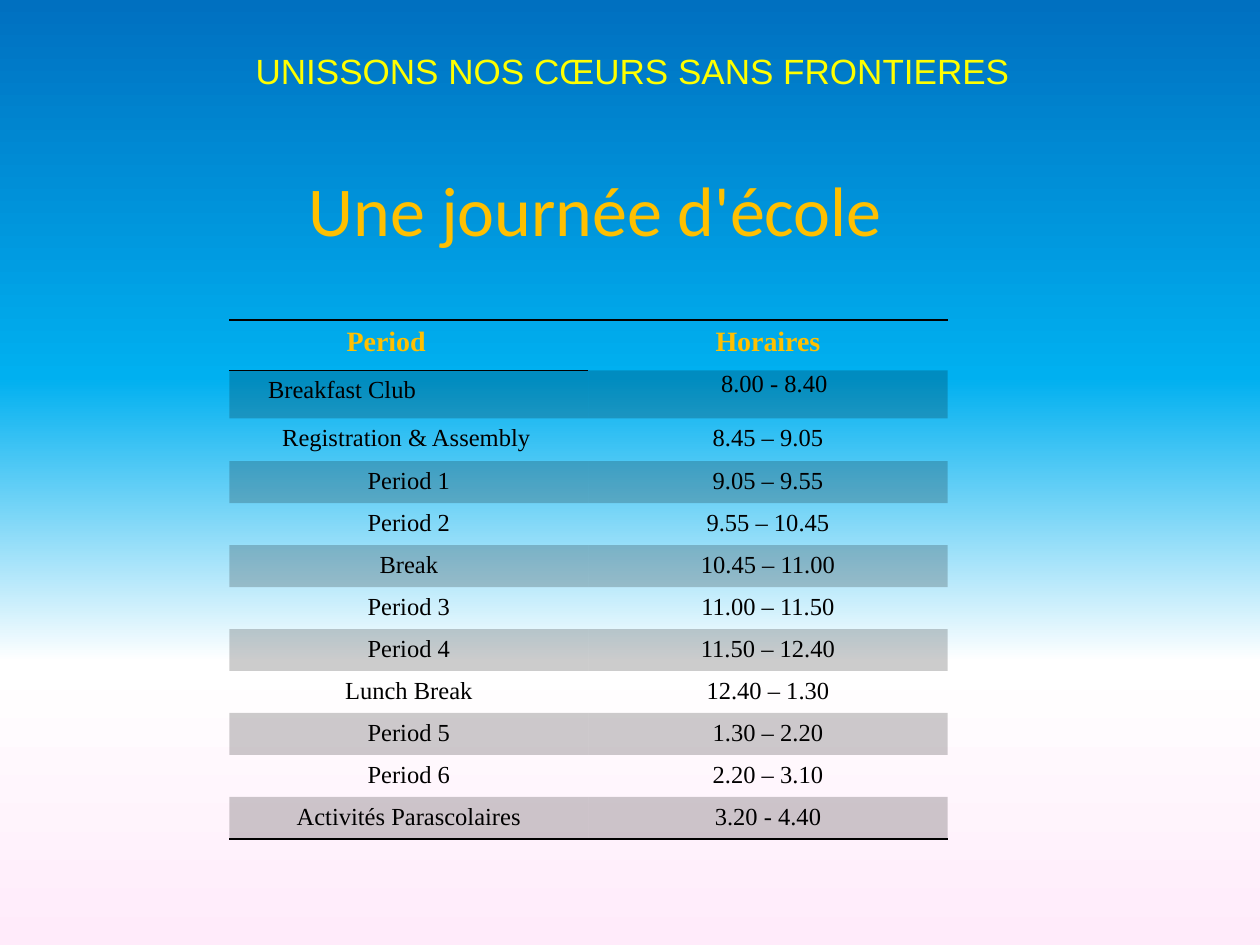
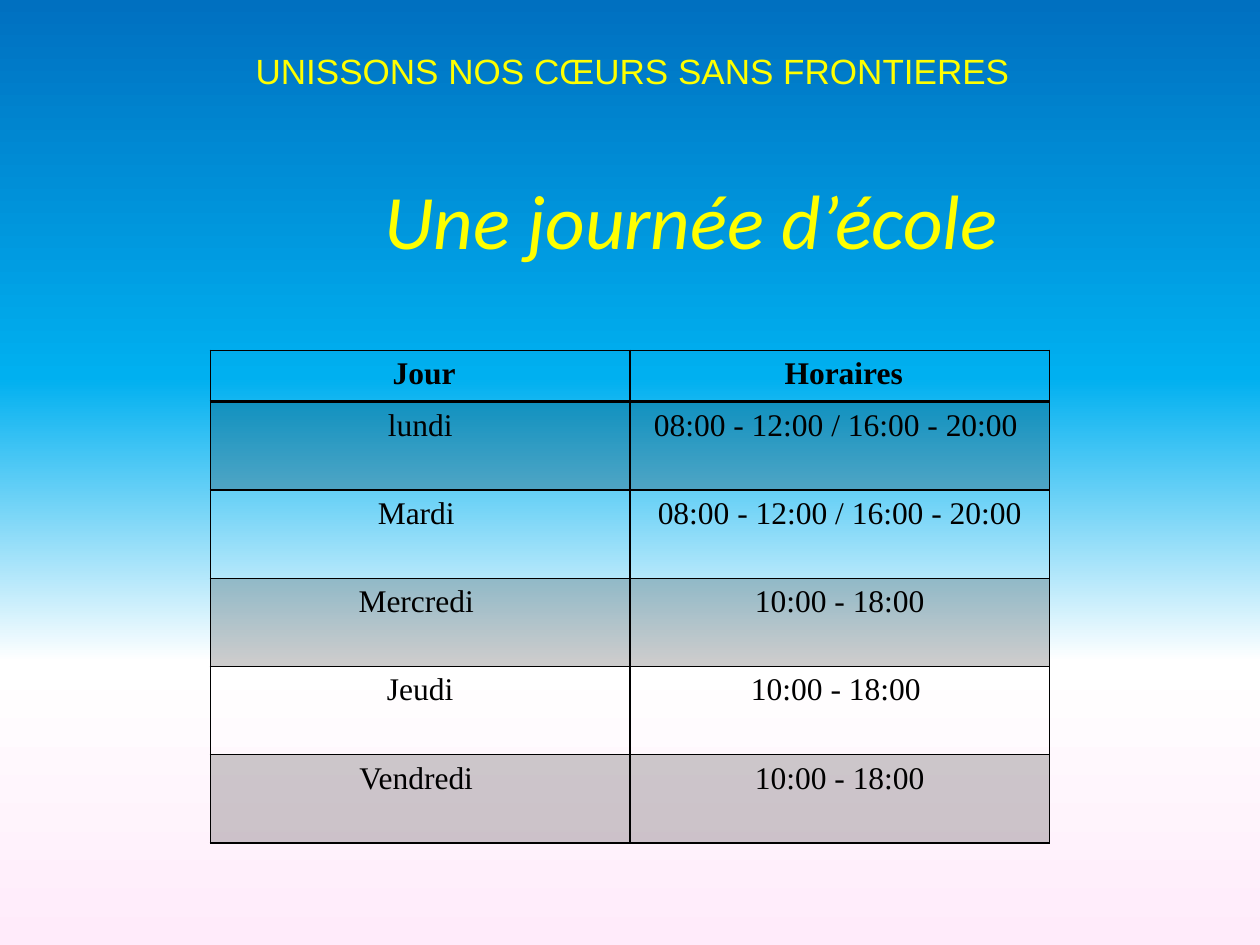
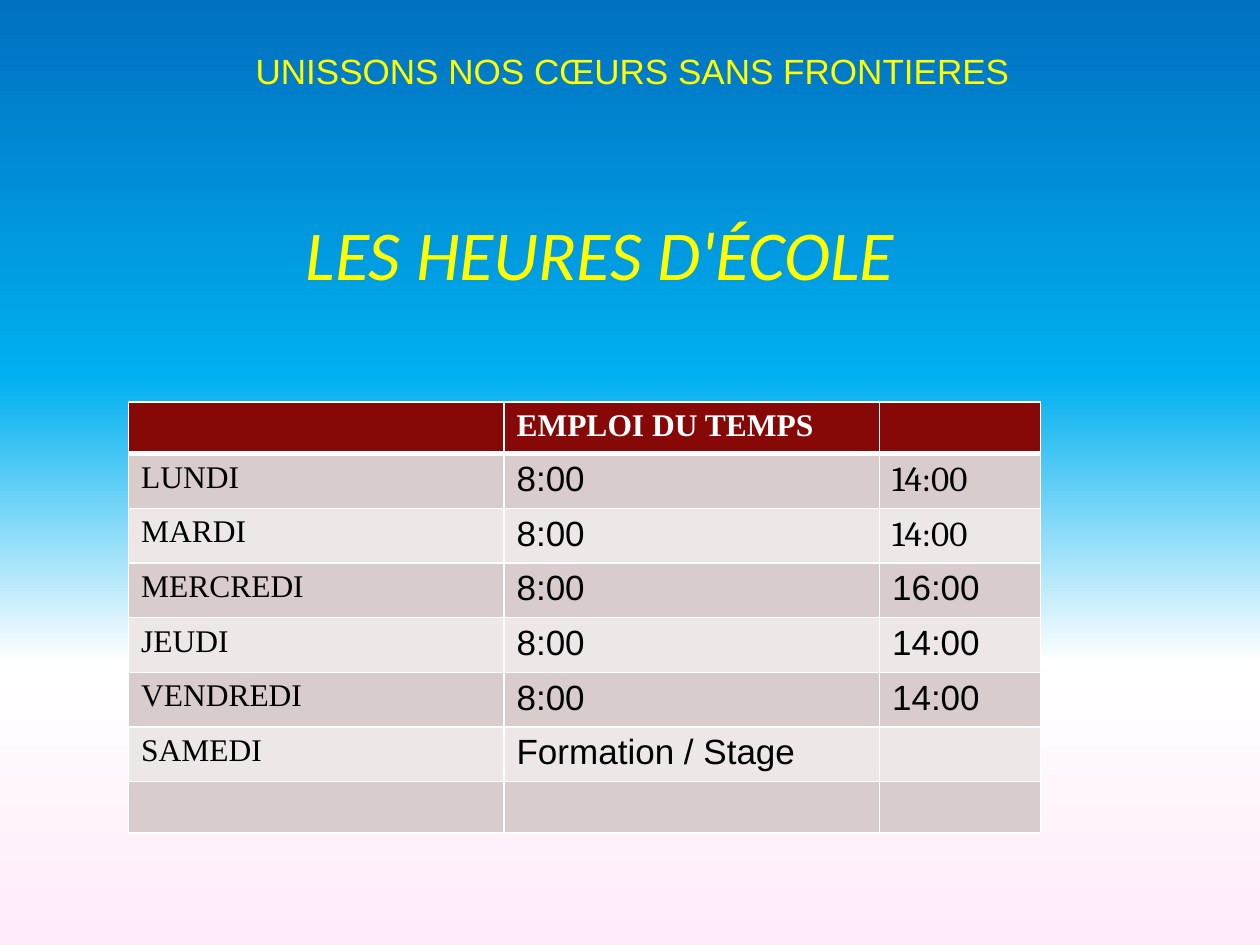
from lxml.etree import SubElement
from pptx import Presentation
from pptx.dml.color import RGBColor
from pptx.enum.text import MSO_ANCHOR, MSO_AUTO_SIZE, PP_ALIGN
from pptx.oxml.ns import qn
from pptx.util import Inches, Pt

COLORS = {
    "yellow": "FFFF00", "gold": "FFC000", "black": "000000", "white": "FFFFFF",
    "maroon": "860908", "rose": "D9CCCC", "pale": "EDE7E7",
}
SKY = [(0, "0070C0"), (40, "00B0F0"), (70, "FFFFFF"), (100, "FFEBFA")]
SERIF = "Times New Roman"
PLAIN_TABLE_STYLE = "{2D5ABB26-0587-4C30-8999-92F81FD0307C}"
BORDER_TAGS = {"left": "a:lnL", "right": "a:lnR", "top": "a:lnT", "bottom": "a:lnB"}

SCHOOL_DAY = [
    ("Period", "Horaires"),
    ("Breakfast Club", "8.00 - 8.40"),
    ("Registration & Assembly", "8.45 – 9.05"),
    ("Period 1", "9.05 – 9.55"),
    ("Period 2", "9.55 – 10.45"),
    ("Break", "10.45 – 11.00"),
    ("Period 3", "11.00 – 11.50"),
    ("Period 4", "11.50 – 12.40"),
    ("Lunch Break", "12.40 – 1.30"),
    ("Period 5", "1.30 – 2.20"),
    ("Period 6", "2.20 – 3.10"),
    ("Activités Parascolaires", "3.20 - 4.40"),
]
OPENING_HOURS = [
    (" Jour", " Horaires"),
    ("lundi", "08:00 - 12:00 / 16:00 - 20:00 "),
    ("Mardi ", "08:00 - 12:00 / 16:00 - 20:00"),
    ("Mercredi ", "10:00 - 18:00"),
    ("Jeudi", "10:00 - 18:00 "),
    ("Vendredi ", "10:00 - 18:00"),
]
WEEK = [
    ("", "EMPLOI DU TEMPS", ""),
    ("LUNDI", "8:00", "14:00"),
    ("MARDI", "8:00", "14:00"),
    ("MERCREDI", "8:00", "16:00"),
    ("JEUDI", "8:00", "14:00"),
    ("VENDREDI", "8:00", "14:00"),
    ("SAMEDI", "Formation / Stage", ""),
    ("", "", ""),
]


def rgb(name):
    return RGBColor.from_string(COLORS[name])


def paint_sky(master):
    """Give every slide the vertical gradient through the master."""
    fill = master.background.fill
    fill.gradient()
    fill.gradient_angle = 270
    stops = master.element.find(".//" + qn("a:gsLst"))
    for stop in list(stops):
        stops.remove(stop)
    for percent, color in SKY:
        stop = SubElement(stops, qn("a:gs"), pos=str(percent * 1000))
        SubElement(stop, qn("a:srgbClr"), val=color)


def write(frame, text, size, font, color, bold=False, italic=False, align=PP_ALIGN.LEFT):
    frame.text = text
    paragraph = frame.paragraphs[0]
    paragraph.alignment = align
    for run in paragraph.runs:
        run.font.size = Pt(size)
        run.font.name = font
        run.font.bold = bold
        run.font.italic = italic
        run.font.color.rgb = rgb(color)


def add_text(slide, at, text, size, font, color, wrap=True, **style):
    frame = slide.shapes.add_textbox(*map(Inches, at)).text_frame
    frame.word_wrap = wrap
    frame.auto_size = MSO_AUTO_SIZE.NONE if wrap else MSO_AUTO_SIZE.SHAPE_TO_FIT_TEXT
    write(frame, text, size, font, color, **style)
    return frame


def add_themed_slide(prs):
    slide = prs.slides.add_slide(prs.slide_layouts[6])
    add_text(slide, (1.93, 0.34, 6.62, 0.44), "UNISSONS NOS CŒURS SANS FRONTIERES",
             20, "Arial", "yellow")
    return slide


def add_plain_table(slide, left, top, widths, heights):
    frame = slide.shapes.add_table(
        len(heights), len(widths), Inches(left), Inches(top),
        Inches(sum(widths)), Inches(sum(heights)))
    table = frame.table
    table.first_row = table.horz_banding = False
    table._tbl.tblPr.find(qn("a:tableStyleId")).text = PLAIN_TABLE_STYLE
    for column, width in zip(table.columns, widths):
        column.width = Inches(width)
    for row, height in zip(table.rows, heights):
        row.height = Inches(height)
    return table


def shade(cell, color, opacity=100):
    cell.fill.solid()
    cell.fill.fore_color.rgb = rgb(color)
    if opacity < 100:
        tint = cell._tc.tcPr.find(".//" + qn("a:srgbClr"))
        SubElement(tint, qn("a:alpha"), val=str(opacity * 1000))


def set_borders(cell, color, **points):
    """Draw the named sides, each with its width in points."""
    properties = cell._tc.get_or_add_tcPr()
    sides = [side for side in BORDER_TAGS if side in points]
    for place, side in enumerate(sides):
        line = SubElement(properties, qn(BORDER_TAGS[side]), w=str(Pt(points[side])))
        fill = SubElement(line, qn("a:solidFill"))
        SubElement(fill, qn("a:srgbClr"), val=COLORS[color])
        properties.insert(place, line)


def set_grid(cell, row, color, header_rule):
    """Frame a cell with thin lines and a heavier rule under the header."""
    set_borders(cell, color, left=1, right=1,
                top=header_rule if row == 1 else 1,
                bottom=header_rule if row == 0 else 1)


def each_cell(table, rows):
    for r, texts in enumerate(rows):
        for c, text in enumerate(texts):
            yield r, c, table.cell(r, c), text


def add_school_day(prs):
    slide = add_themed_slide(prs)
    heights = [0.4, 0.38, 0.34] + [1 / 3] * 9
    table = add_plain_table(slide, 1.82, 2.54, [2.85] * 2, heights)
    for r, c, cell, text in each_cell(table, SCHOOL_DAY):
        header = r == 0
        write(cell.text_frame, text, 16 if header else 14, SERIF,
              "gold" if header else "black", bold=header, align=PP_ALIGN.CENTER)
        if r % 2:
            shade(cell, "black", 20)
    last = len(SCHOOL_DAY) - 1
    set_borders(table.cell(0, 0), "black", top=1, bottom=1)
    set_borders(table.cell(0, 1), "black", top=1)
    for c in range(2):
        set_borders(table.cell(last, c), "black", bottom=1)
    for r, margin in enumerate([0.46, 1.16, 0.14]):
        table.cell(r, 0).margin_right = Inches(margin)
    breakfast_time = table.cell(1, 1)
    breakfast_time.margin_left = Inches(0.1)
    breakfast_time.margin_top = breakfast_time.margin_right = breakfast_time.margin_bottom = 0
    add_text(slide, (1.39, 1.27, 6.67, 0.77), "Une journée d'école", 40, "Calibri", "gold",
             align=PP_ALIGN.CENTER)


def add_opening_hours(prs):
    slide = add_themed_slide(prs)
    add_text(slide, (2.95, 1.32, 5.12, 0.84), "Une journée d’école", 44, "Calibri", "yellow",
             wrap=False, italic=True)
    table = add_plain_table(slide, 1.67, 2.78, [3.33] * 2, [0.41] + [0.7] * 5)
    for r, c, cell, text in each_cell(table, OPENING_HOURS):
        write(cell.text_frame, text, 18, SERIF, "black", bold=r == 0, align=PP_ALIGN.CENTER)
        if r % 2:
            shade(cell, "black", 20)
        set_grid(cell, r, "black", header_rule=2)


def add_week(prs):
    slide = add_themed_slide(prs)
    title = add_text(slide, (0.92, 1.25, 7.81, 1.51), "LES HEURES D'ÉCOLE ", 40, "Calibri",
                     "yellow", italic=True, align=PP_ALIGN.CENTER)
    title.vertical_anchor = MSO_ANCHOR.MIDDLE
    heights = [0.41] + [0.43] * 6 + [0.41]
    table = add_plain_table(slide, 1.02, 3.19, [2.98, 2.98, 1.28], heights)
    for r, c, cell, text in each_cell(table, WEEK):
        header = r == 0
        if header or c == 0:
            size, font = 18, SERIF
        else:
            size, font = 20, "Cambria" if c == 2 and r < 3 else "Arial"
        write(cell.text_frame, text, size, font, "white" if header else "black", bold=header)
        shade(cell, "maroon" if header else "rose" if r % 2 else "pale")
        set_grid(cell, r, "white", header_rule=3)


def main():
    prs = Presentation()
    prs.slide_width, prs.slide_height = Inches(10), Inches(7.5)
    paint_sky(prs.slide_master)
    add_school_day(prs)
    add_opening_hours(prs)
    add_week(prs)
    prs.save("out.pptx")


if __name__ == "__main__":
    main()
